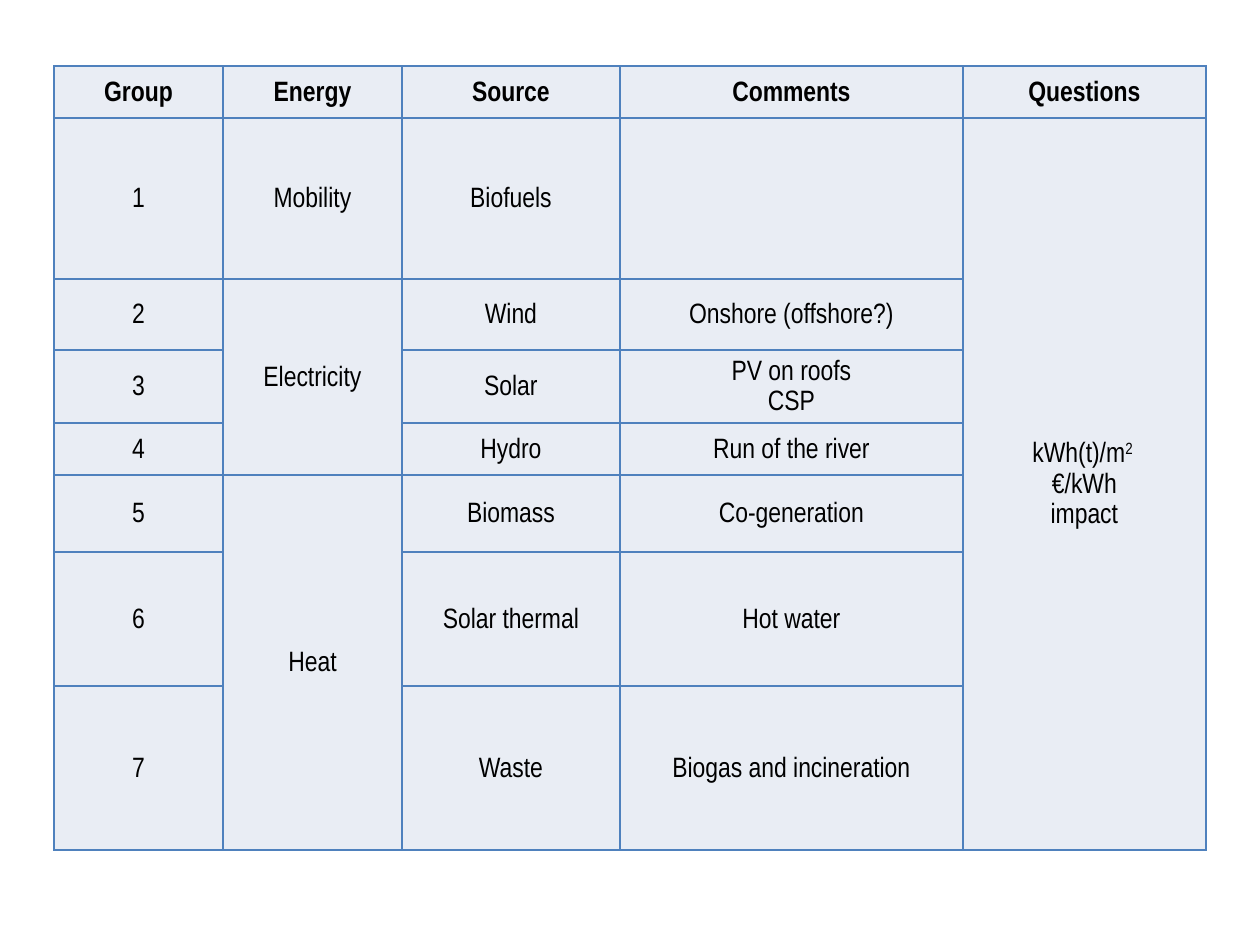
from lxml.etree import SubElement
from pptx import Presentation
from pptx.dml.color import RGBColor
from pptx.enum.text import MSO_ANCHOR, PP_ALIGN
from pptx.oxml.ns import qn
from pptx.util import Emu, Pt

PIXEL = 914400 // 126
BLACK = RGBColor(0x00, 0x00, 0x00)
BLUE = RGBColor(0x4F, 0x81, 0xBD)
PALE = RGBColor(0xE9, 0xED, 0xF4)

COLUMN_WIDTHS = [169, 179, 218, 343, 243]
ROW_HEIGHTS = [52, 161, 71, 73, 52, 77, 134, 164]
HEADINGS = ["Group", "Energy", "Source", "Comments", "Questions"]
SOURCES = [
    ("Biofuels", ""),
    ("Wind", "Onshore (offshore?)"),
    ("Solar", "PV on roofs\nCSP"),
    ("Hydro", "Run of the river"),
    ("Biomass", "Co-generation"),
    ("Solar thermal", "Hot water"),
    ("Waste", "Biogas and incineration"),
]
# First row, last row and name of each kind of energy
ENERGIES = [(1, 1, "Mobility"), (2, 4, "Electricity"), (5, 7, "Heat")]
QUESTIONS = "kWh(t)/m^2 \n€/kWh\nimpact"


def px(length):
    return Emu(length * PIXEL)


def write(frame, text, *, font, size, color, bold=False):
    """Write one paragraph per line; what follows ^ in a line is superscript."""
    for index, line in enumerate(text.split("\n")):
        para = frame.add_paragraph() if index else frame.paragraphs[0]
        para.alignment = PP_ALIGN.CENTER
        para.line_spacing = 1.15
        for part, words in enumerate(line.split("^")):
            span = para.add_run()
            span.text = words
            span.font.name = font
            span.font.size = Pt(size)
            span.font.bold = bold
            span.font.color.rgb = color
            if part:
                span.font._element.set("baseline", "30000")


class SlideBuilder:
    """Holds the style and the slide being built."""

    font = "Arial Narrow"
    size = 16

    def __init__(self, deck):
        self.page = deck.slides.add_slide(deck.slide_layouts[6])

    def table(self, left, top, widths, heights):
        frame = self.page.shapes.add_table(
            len(heights), len(widths), px(left), px(top),
            px(sum(widths)), px(sum(heights)))
        table = frame.table
        for column, width in zip(table.columns, widths):
            column.width = px(width)
        for row, height in zip(table.rows, heights):
            row.height = px(height)
        for cell in table.iter_cells():
            self.style_cell(cell)
        return table

    def style_cell(self, cell):
        cell.margin_left = cell.margin_right = px(4)
        cell.margin_top = cell.margin_bottom = 0
        cell.vertical_anchor = MSO_ANCHOR.MIDDLE
        properties = cell._tc.get_or_add_tcPr()
        for side in ("lnL", "lnR", "lnT", "lnB"):
            line = SubElement(properties, qn(f"a:{side}"), w=str(Pt(1)))
            fill = SubElement(line, qn("a:solidFill"))
            SubElement(fill, qn("a:srgbClr"), val=str(BLUE))
        cell.fill.solid()
        cell.fill.fore_color.rgb = PALE

    def cell_text(self, cell, text, bold=False):
        write(cell.text_frame, text, font=self.font, size=self.size,
              color=BLACK, bold=bold)

    def merged_text(self, table, column, first, last, text):
        cell = table.cell(first, column)
        if last > first:
            cell.merge(table.cell(last, column))
        self.cell_text(cell, text)


def main():
    deck = Presentation()
    deck.slide_width, deck.slide_height = px(1260), px(945)
    builder = SlideBuilder(deck)
    table = builder.table(54, 66, COLUMN_WIDTHS, ROW_HEIGHTS)

    for column, heading in enumerate(HEADINGS):
        builder.cell_text(table.cell(0, column), heading, bold=True)
    for group, (source, comment) in enumerate(SOURCES, start=1):
        builder.cell_text(table.cell(group, 0), str(group))
        builder.cell_text(table.cell(group, 2), source)
        if comment:
            builder.cell_text(table.cell(group, 3), comment)
    for first, last, energy in ENERGIES:
        builder.merged_text(table, 1, first, last, energy)
    builder.merged_text(table, 4, 1, len(SOURCES), QUESTIONS)

    deck.save("out.pptx")


if __name__ == "__main__":
    main()
